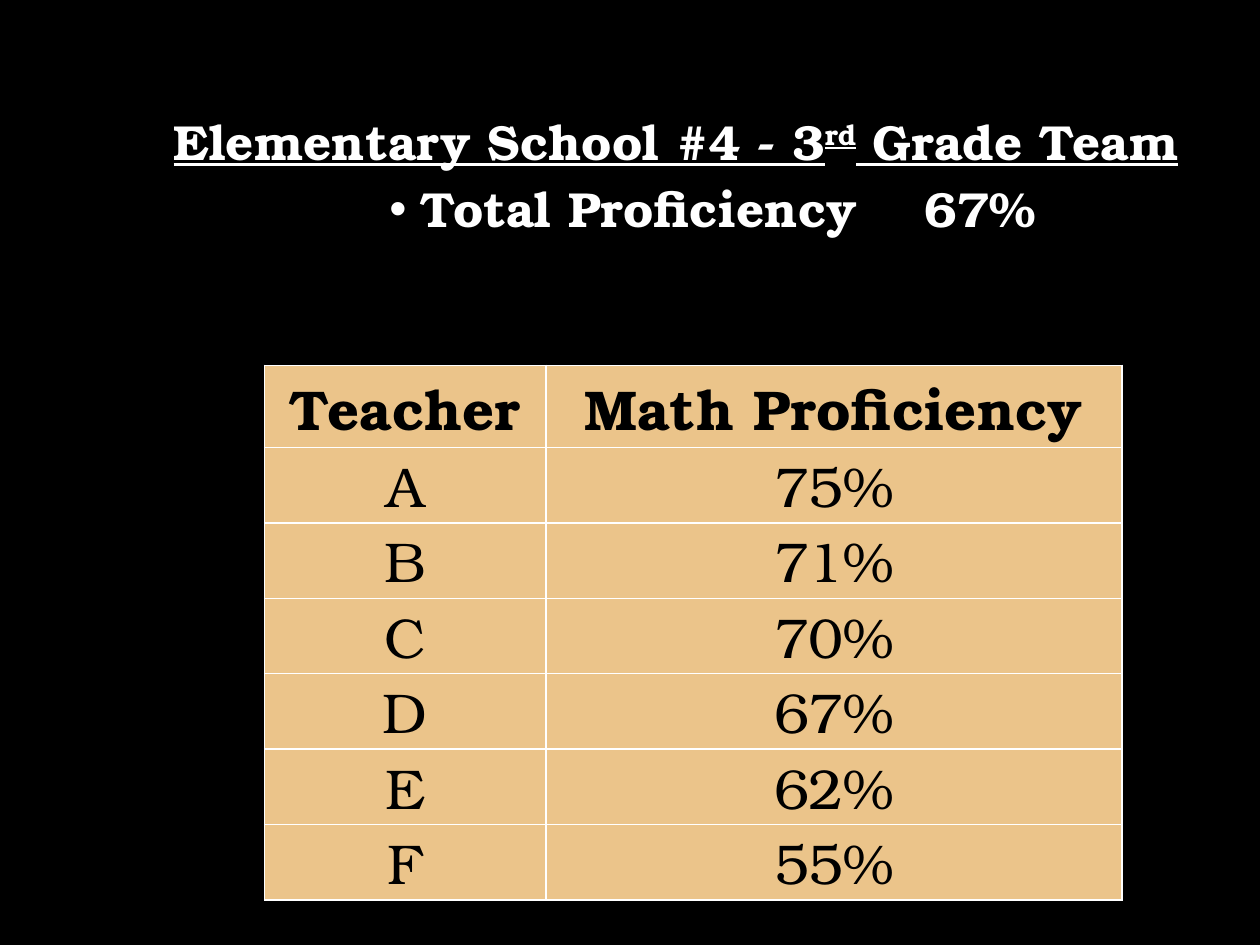
"""Build the grade team proficiency slide."""

from dataclasses import dataclass

from lxml.etree import SubElement
from pptx import Presentation
from pptx.dml.color import RGBColor
from pptx.enum.text import MSO_ANCHOR as Anchor
from pptx.enum.text import MSO_AUTO_SIZE as AutoSize
from pptx.enum.text import PP_ALIGN as Align
from pptx.oxml.ns import qn
from pptx.util import Pt

COLORS = {"background": "000000", "heading": "FFFFFF", "cell": "EBC48A",
          "cell_text": "000000", "border": "FFFFFF"}
FONT = "TeX Gyre Bonum"
BODY_BOX = {"left": 89.3, "top": 59.8, "width": 594, "height": 97.2}
TABLE_LEFT, TABLE_TOP = 151.2, 208.8
COLUMN_WIDTHS = (160.8, 329.2)
HEADER_HEIGHT, ROW_HEIGHT = 46.9, 43.1


@dataclass(frozen=True)
class Piece:
    text: str
    underline: bool = False
    baseline: int = 0


@dataclass(frozen=True)
class Line:
    pieces: tuple[Piece, ...]
    level: int
    align: Align
    space_before: float
    margin: float = 0
    indent: float = 0
    bullet: str = ""


@dataclass(frozen=True)
class Row:
    teacher: str
    proficiency: str
    header: bool = False


LINES = (
    Line((Piece("Elementary School #4 - 3", True), Piece("rd", True, 30),
          Piece(" Grade Team", True)), 0, Align.CENTER, 10),
    Line((Piece("Total Proficiency \t67%"),), 1, Align.LEFT, 5, 144, -18, "•"),
)
ROWS = (
    Row("Teacher", "Math Proficiency", True),
    Row("A", "75%"), Row("B", "71%"), Row("C", "70%"),
    Row("D", "67%"), Row("E", "62%"), Row("F", "55%"),
)


def apply(target, values: dict) -> None:
    for name, value in values.items():
        setattr(target, name, value)


def add_run(paragraph, text: str, color: str, **values):
    run = paragraph.add_run()
    run.text = text
    apply(run.font, {"name": FONT, **values})
    run.font.color.rgb = RGBColor.from_string(COLORS[color])
    return run


def write_line(paragraph, line: Line) -> None:
    apply(paragraph, {"level": line.level, "alignment": line.align,
                      "space_before": Pt(line.space_before)})
    properties = paragraph._p.get_or_add_pPr()
    properties.set("marL", str(Pt(line.margin)))
    properties.set("indent", str(Pt(line.indent)))
    if line.bullet:
        SubElement(properties, qn("a:buChar"), char=line.bullet)
    else:
        SubElement(properties, qn("a:buNone"))
    for piece in line.pieces:
        run = add_run(paragraph, piece.text, "heading", size=Pt(28.1),
                      bold=True, underline=piece.underline)
        if piece.baseline:
            run.font._element.set("baseline", str(piece.baseline * 1000))


def write_body(body) -> None:
    apply(body, {name: Pt(value) for name, value in BODY_BOX.items()})
    frame = body.text_frame
    apply(frame, {"word_wrap": True, "auto_size": AutoSize.NONE,
                  "vertical_anchor": Anchor.TOP})
    for index, line in enumerate(LINES):
        write_line(frame.add_paragraph() if index else frame.paragraphs[0], line)


def add_borders(cell) -> None:
    properties = cell._tc.get_or_add_tcPr()
    for side in ("lnL", "lnR", "lnT", "lnB"):
        border = SubElement(properties, qn(f"a:{side}"), w=str(Pt(1)))
        fill = SubElement(border, qn("a:solidFill"))
        SubElement(fill, qn("a:srgbClr"), val=COLORS["border"])


def write_cell(cell, text: str, header: bool) -> None:
    add_borders(cell)
    cell.fill.solid()
    cell.fill.fore_color.rgb = RGBColor.from_string(COLORS["cell"])
    margins = dict.fromkeys(
        ("margin_left", "margin_right", "margin_top", "margin_bottom"), 0)
    apply(cell, {**margins,
                 "vertical_anchor": Anchor.BOTTOM if header else Anchor.MIDDLE})
    paragraph = cell.text_frame.paragraphs[0]
    paragraph.alignment = Align.CENTER
    add_run(paragraph, text, "cell_text", size=Pt(32), bold=header)


def add_proficiency_table(slide) -> None:
    heights = [HEADER_HEIGHT if row.header else ROW_HEIGHT for row in ROWS]
    table = slide.shapes.add_table(
        len(ROWS), len(COLUMN_WIDTHS), Pt(TABLE_LEFT), Pt(TABLE_TOP),
        Pt(sum(COLUMN_WIDTHS)), Pt(sum(heights))).table
    for column, width in zip(table.columns, COLUMN_WIDTHS):
        column.width = Pt(width)
    for table_row, height, row in zip(table.rows, heights, ROWS):
        table_row.height = Pt(height)
        for cell, text in zip(table_row.cells, (row.teacher, row.proficiency)):
            write_cell(cell, text, row.header)


def main() -> None:
    presentation = Presentation()
    apply(presentation, {"slide_width": Pt(720), "slide_height": Pt(540)})
    slide = presentation.slides.add_slide(presentation.slide_layouts[1])
    background = slide.background.fill
    background.solid()
    background.fore_color.rgb = RGBColor.from_string(COLORS["background"])
    title = slide.shapes.title._element
    title.getparent().remove(title)
    write_body(slide.placeholders[1])
    add_proficiency_table(slide)
    presentation.save("out.pptx")


if __name__ == "__main__":
    main()
